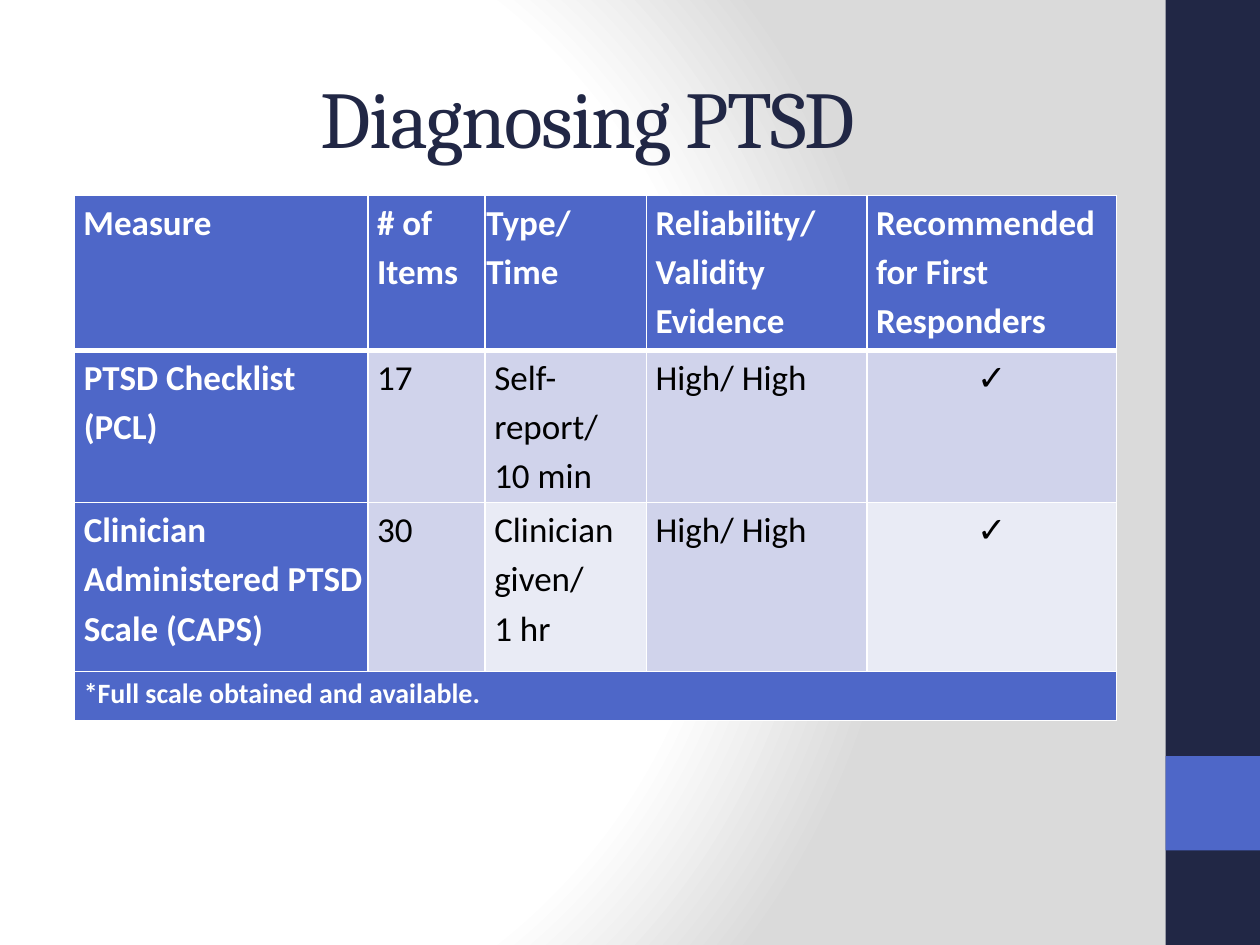
"""Build the slide on measures for diagnosing PTSD."""
from pptx import Presentation
from pptx.dml.color import RGBColor
from pptx.enum.shapes import MSO_SHAPE
from pptx.enum.text import MSO_ANCHOR, PP_ALIGN
from pptx.oxml import parse_xml
from pptx.oxml.ns import nsdecls, qn
from pptx.util import Pt

RECTANGLE = MSO_SHAPE.RECTANGLE
CENTER = PP_ALIGN.CENTER
MIDDLE = MSO_ANCHOR.MIDDLE

NAVY, BLUE, WHITE, BLACK = "212745", "4E67C8", "FFFFFF", "000000"
LILAC, PALE = "D0D3EB", "E9EBF5"
TITLE = "Diagnosing PTSD"
CHECK = "✓"
MEASURES = [
    ["Measure", "# of Items", "Type/ \vTime", "Reliability/ Validity Evidence",
     "Recommended for First Responders"],
    ["PTSD Checklist (PCL)", "17", "Self-report/\v10 min", "High/ High", CHECK],
    ["Clinician Administered PTSD Scale (CAPS)", "30", "Clinician given/ \v1 hr",
     "High/ High", CHECK],
    ["*Full scale obtained and available."],
]
ROW_FILLS = [
    [BLUE] * 5,
    [BLUE] + [LILAC] * 4,
    [BLUE, LILAC, PALE, LILAC, PALE],
    [BLUE] * 5,
]
COLUMN_WIDTHS = [167.8, 67, 92.2, 126, 142.6]
ROW_HEIGHTS = [88.6, 87.1, 96.5, 28.1]
SIDEBAR = [(0, 540, NAVY), (432, 54, BLUE)]
BACKDROP_STOPS = [(0, WHITE), (75, WHITE), (100, "DADADA")]


def color(value):
    return RGBColor.from_string(value)


def paint(target, value):
    target.fill.solid()
    target.fill.fore_color.rgb = color(value)


def style(paragraph, font_name, size, value, bold=False):
    for run in paragraph.runs:
        run.font.name = font_name
        run.font.size = Pt(size)
        run.font.bold = bold
        run.font.color.rgb = color(value)


def add_backdrop(slide):
    slide.background.fill.gradient()
    gradient = slide.element.find(".//" + qn("a:gradFill"))
    stops = "".join(
        f'<a:gs pos="{position * 1000}"><a:srgbClr val="{value}"/></a:gs>'
        for position, value in BACKDROP_STOPS)
    gradient.getparent().replace(gradient, parse_xml(
        f'<a:gradFill {nsdecls("a")} rotWithShape="1"><a:gsLst>{stops}</a:gsLst>'
        '<a:path path="circle"><a:fillToRect l="20000" t="50000" r="100000" b="50000"/>'
        '</a:path></a:gradFill>'))


def add_sidebar(slide):
    for top, height, value in SIDEBAR:
        band = slide.shapes.add_shape(RECTANGLE, Pt(666), Pt(top), Pt(54), Pt(height))
        band.shadow.inherit = False
        paint(band, value)
        band.line.fill.background()


def add_title(slide):
    frame = slide.shapes.add_textbox(Pt(36), Pt(21.6), Pt(600), Pt(90)).text_frame
    frame.word_wrap = True
    frame.vertical_anchor = MIDDLE
    frame.text = TITLE
    heading = frame.paragraphs[0]
    heading.alignment = CENTER
    style(heading, "Cambria", 46, NAVY)
    heading.runs[0].font._element.set("spc", "-100")


def add_borders(cell, row):
    properties = cell._tc.get_or_add_tcPr()
    widths = {"L": 1, "R": 1, "T": 3 if row == 1 else 1, "B": 3 if row == 0 else 1}
    for index, (side, width) in enumerate(widths.items()):
        properties.insert(index, parse_xml(
            f'<a:ln{side} {nsdecls("a")} w="{Pt(width)}"><a:solidFill>'
            f'<a:srgbClr val="{WHITE}"/></a:solidFill></a:ln{side}>'))


def fill_cell(cell, text, row, column):
    label = row == 0 or column == 0
    cell.text_frame.text = text
    paragraph = cell.text_frame.paragraphs[0]
    paragraph.line_spacing = 1.15
    if text == CHECK:
        paragraph.alignment = CENTER
    else:
        paragraph.space_before = paragraph.space_after = Pt(2)
    size = 16 if row == len(MEASURES) - 1 else 20
    style(paragraph, "Calibri", size, WHITE if label else BLACK, label)


def cell_insets(row, column):
    if row == 0 and column == 2:
        return 0.7, 0.7
    if row > 0 and column == 0:
        return 5.4, 0.7
    return 5.2, 5.2


def add_measures(slide):
    table = slide.shapes.add_table(
        len(ROW_HEIGHTS), len(COLUMN_WIDTHS), Pt(42.5), Pt(111.6),
        Pt(sum(COLUMN_WIDTHS)), Pt(sum(ROW_HEIGHTS))).table
    for column, width in zip(table.columns, COLUMN_WIDTHS):
        column.width = Pt(width)
    for row, height in zip(table.rows, ROW_HEIGHTS):
        row.height = Pt(height)
    last = len(ROW_HEIGHTS) - 1
    table.cell(last, 0).merge(table.cell(last, len(COLUMN_WIDTHS) - 1))
    for row, fills in enumerate(ROW_FILLS):
        for column, value in enumerate(fills):
            cell = table.cell(row, column)
            left, right = cell_insets(row, column)
            cell.margin_left, cell.margin_right = Pt(left), Pt(right)
            cell.margin_top = cell.margin_bottom = Pt(0)
            paint(cell, value)
            add_borders(cell, row)
            if column < len(MEASURES[row]):
                fill_cell(cell, MEASURES[row][column], row, column)


def main():
    deck = Presentation()
    deck.slide_width, deck.slide_height = Pt(720), Pt(540)
    slide = deck.slides.add_slide(deck.slide_layouts[6])
    add_backdrop(slide)
    add_sidebar(slide)
    add_title(slide)
    add_measures(slide)
    deck.save("out.pptx")


if __name__ == "__main__":
    main()
